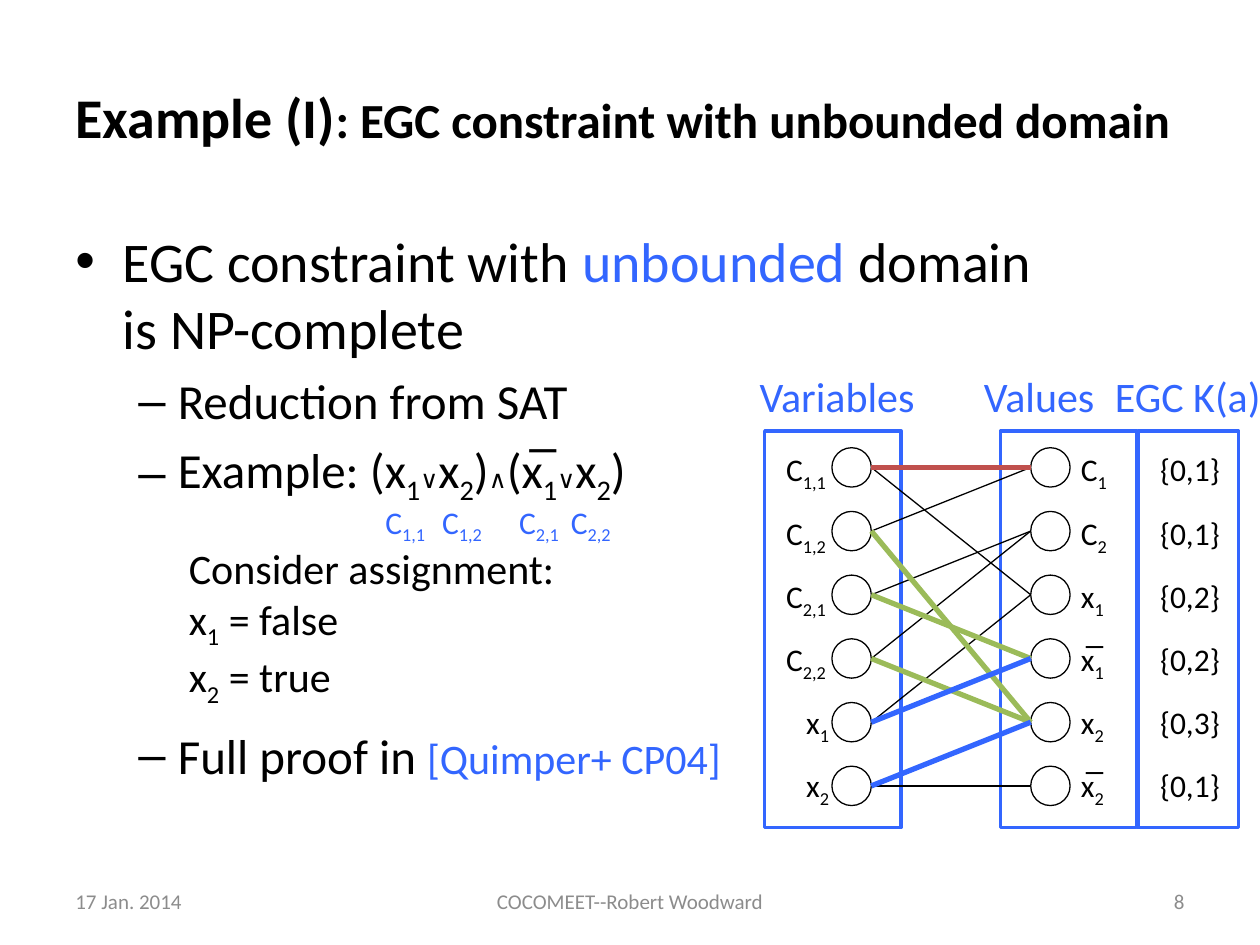
"""Build the slide on EGC constraints with unbounded domains."""
from collections import namedtuple
from dataclasses import dataclass

from lxml.etree import SubElement
from pptx import Presentation
from pptx.dml.color import RGBColor
from pptx.enum.shapes import MSO_CONNECTOR as Connector, MSO_SHAPE as Preset
from pptx.enum.text import MSO_ANCHOR as Anchor, PP_ALIGN as Align
from pptx.oxml.ns import qn
from pptx.slide import Slide
from pptx.util import Pt

BLACK = RGBColor(0x00, 0x00, 0x00)
BLUE = RGBColor(0x33, 0x66, 0xFF)
GREEN = RGBColor(0x9B, 0xBB, 0x59)
RED = RGBColor(0xC0, 0x50, 0x4D)
GRAY = RGBColor(0x8C, 0x8C, 0x8C)

Run = namedtuple("Run", "text size color lowered", defaults=(None, None, False))
Bullet = namedtuple("Bullet", "mark left hanging before")


@dataclass
class SlideWriter:
    slide: Slide
    font: str = "Calibri"

    def text(self, box, paragraphs, size, color=BLACK, bold=False,
             align=Align.LEFT, anchor=Anchor.TOP, bullets=(), tabs=()):
        shape = self.slide.shapes.add_textbox(*map(Pt, box))
        frame = shape.text_frame
        frame.word_wrap = True
        frame.vertical_anchor = anchor
        for index, runs in enumerate(paragraphs):
            paragraph = frame.add_paragraph() if index else frame.paragraphs[0]
            paragraph.alignment = align
            for item in runs:
                self.run(paragraph, item, size, color, bold)
            if bullets:
                self.bullet(paragraph, bullets[index])
            if tabs:
                self.tabs(paragraph, tabs)

    def run(self, paragraph, item, size, color, bold):
        run = paragraph.add_run()
        run.text = item.text
        run.font.name = self.font
        run.font.size = Pt(item.size or size)
        run.font.bold = bold
        run.font.color.rgb = item.color or color
        if item.lowered:
            run._r.get_or_add_rPr().set("baseline", "-25000")

    def bullet(self, paragraph, bullet):
        paragraph.space_before = Pt(bullet.before)
        properties = paragraph._p.get_or_add_pPr()
        properties.set("marL", str(Pt(bullet.left)))
        properties.set("indent", str(-Pt(bullet.hanging)))
        SubElement(properties, qn("a:buFont"), typeface="Arial")
        SubElement(properties, qn("a:buChar"), char=bullet.mark)

    def tabs(self, paragraph, positions):
        stops = SubElement(paragraph._p.get_or_add_pPr(), qn("a:tabLst"))
        for position in positions:
            SubElement(stops, qn("a:tab"), pos=str(Pt(position)), algn="l")

    def outline(self, preset, box, color, width):
        shape = self.slide.shapes.add_shape(preset, *map(Pt, box))
        shape.shadow.inherit = False
        shape.fill.background()
        shape.line.color.rgb = color
        shape.line.width = Pt(width)

    def line(self, start, end, color, width):
        connector = self.slide.shapes.add_connector(
            Connector.STRAIGHT, *map(Pt, (*start, *end)))
        connector.line.color.rgb = color
        connector.line.width = Pt(width)
        SubElement(connector._element.spPr, qn("a:effectLst"))


def indexed(letter, index):
    return [Run(letter), Run(index, lowered=True)]


def add_text(writer):
    writer.text((36, 21.6, 648, 90),
                [[Run("Example (I)"), Run(": EGC constraint with unbounded domain", 28)]],
                32, bold=True, anchor=Anchor.MIDDLE)

    first = Bullet("•", 27, 27, 6.4)
    second = Bullet("–", 58.5, 22.5, 5.6)
    after_assignment = second._replace(before=125)
    formula = [Run("Example: (x"), Run("1", lowered=True), Run("∨", 14),
               *indexed("x", "2"), Run(")"), Run("∧", 14), Run("(x̅"),
               Run("1", lowered=True), Run("∨", 14), *indexed("x", "2"), Run(")")]
    writer.text((36, 126, 575.3, 356.4),
                [[Run("EGC constraint with ", 32), Run("unbounded ", 32, BLUE),
                  Run("domain is NP-complete", 32)],
                 [Run("Reduction from SAT")],
                 formula,
                 [Run("Full proof in "), Run("[Quimper+ CP04]", 24, BLUE)]],
                28, bullets=(first, second, second, after_assignment))

    writer.text((100.8, 306.7, 293, 94.3),
                [[Run("Consider assignment:")],
                 [*indexed("x", "1"), Run(" = false")],
                 [*indexed("x", "2"), Run(" = true")]], 24)

    literals = [*indexed("C", "1,1"), Run("\t"), *indexed("C", "1,2"), Run("\t"),
                *indexed("C", "2,1"), Run("\t"), *indexed("C", "2,2")]
    writer.text((213.1, 283.7, 164.2, 28.8), [literals], 18, BLUE,
                tabs=(32.4, 76.4, 106))

    for left, width, align, words in ((36, 167.8, Align.LEFT, "17 Jan. 2014"),
                                      (216.7, 286.6, Align.CENTER, "COCOMEET--Robert Woodward"),
                                      (516.2, 167.8, Align.RIGHT, "8")):
        writer.text((left, 500.4, width, 28.8), [[Run(words)]], 12, GRAY,
                    align=align, anchor=Anchor.MIDDLE)


def add_graph(writer):
    for left, width, words in ((427, 111.6, "Variables"), (555.1, 97.2, "Values"),
                               (630, 119.5, "EGC K(a)")):
        writer.text((left, 208.1, width, 36), [[Run(words)]], 24, BLUE)
    for left, width in ((437, 77.8), (650.2, 57.6), (571.7, 77.8)):
        writer.outline(Preset.RECTANGLE, (left, 246.2, width, 226.8), BLUE, 2)

    diameter, first_center, pitch = 22.5, 267.1, 36.4
    variable_left, value_left = 475.4, 589

    def center(row):
        return first_center + row * pitch

    def edge(variable, value, color, width):
        writer.line((variable_left + diameter, center(variable)),
                    (value_left, center(value)), color, width)

    for row in range(6):
        for left in (variable_left, value_left):
            writer.outline(Preset.OVAL,
                           (left, center(row) - diameter / 2, diameter, diameter),
                           BLACK, 0.75)

    values_of = ((0, 2), (0, 4), (1, 3), (1, 4), (2, 3), (4, 5))
    for variable, values in enumerate(values_of):
        for value in values:
            edge(variable, value, BLACK, 0.75)

    rows = ((("C", "1,1"), ("C", "1"), "{0,1}"),
            (("C", "1,2"), ("C", "2"), "{0,1}"),
            (("C", "2,1"), ("x", "1"), "{0,2}"),
            (("C", "2,2"), ("x̅", "1"), "{0,2}"),
            (("x", "1"), ("x", "2"), "{0,3}"),
            (("x", "2"), ("x̅", "2"), "{0,1}"))
    for row, (variable, value, bounds) in enumerate(rows):
        variable_label = 442.1 if variable[0] == "C" else 453.6
        for left, runs in ((variable_label, indexed(*variable)),
                           (610.6, indexed(*value)), (655.9, [Run(bounds)])):
            writer.text((left, 253.9 + row * 36.1, 50.4, 28.8), [runs], 18)

    for variable, value, color in ((1, 4, GREEN), (2, 3, GREEN), (3, 4, GREEN),
                                   (4, 3, BLUE), (5, 4, BLUE), (0, 0, RED)):
        edge(variable, value, color, 3)


def main():
    presentation = Presentation()
    presentation.slide_width, presentation.slide_height = Pt(720), Pt(540)
    writer = SlideWriter(presentation.slides.add_slide(presentation.slide_layouts[6]))
    add_text(writer)
    add_graph(writer)
    presentation.save("out.pptx")


if __name__ == "__main__":
    main()
